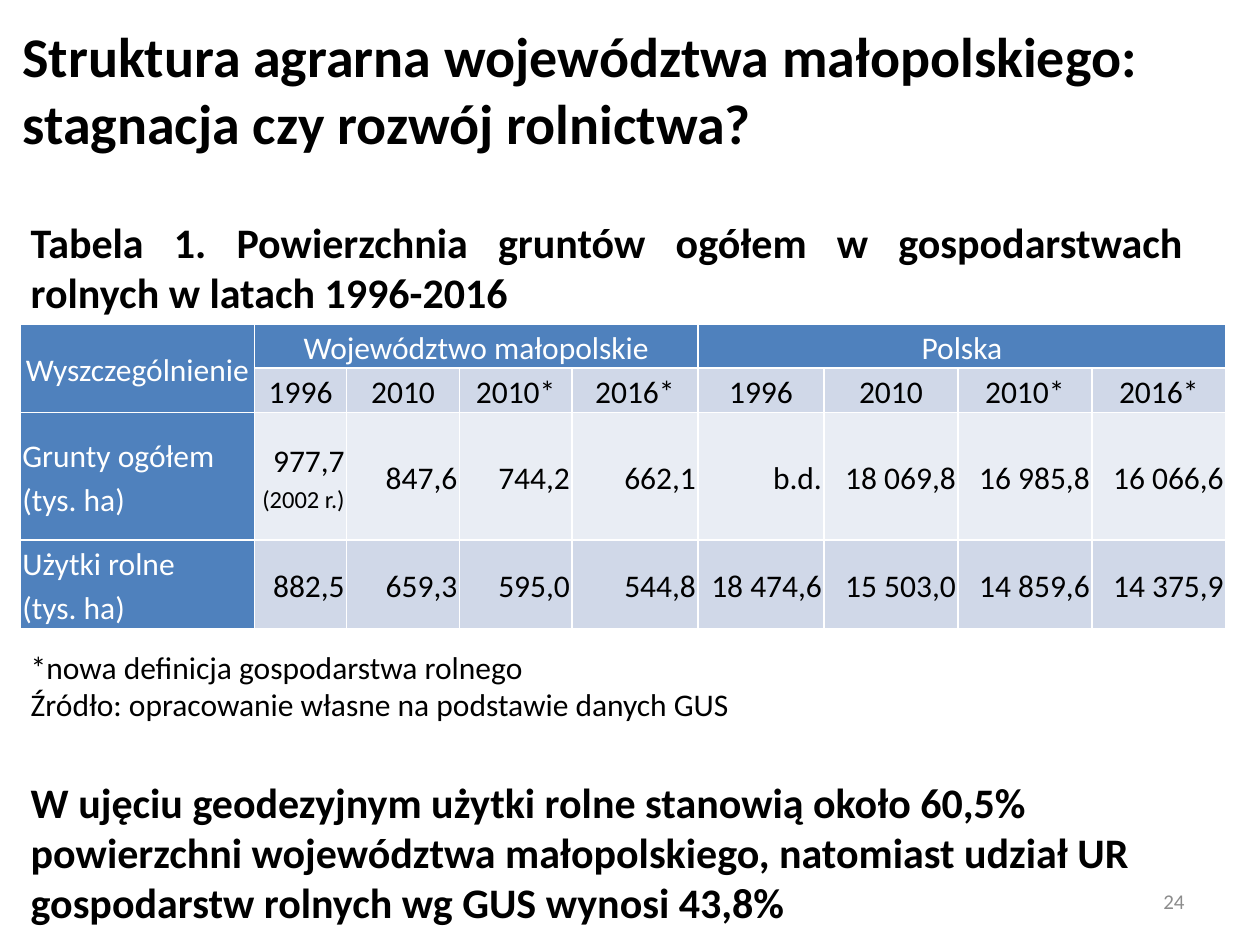
from dataclasses import dataclass

from lxml.etree import SubElement
from pptx import Presentation
from pptx.dml.color import RGBColor
from pptx.enum.text import MSO_ANCHOR as Anchor, MSO_AUTO_SIZE as AutoSize, PP_ALIGN as Align
from pptx.oxml.ns import qn
from pptx.util import Cm, Pt


@dataclass(frozen=True)
class Theme:
    font: str = "Calibri"
    ink: str = "000000"
    white: str = "FFFFFF"
    muted: str = "8C8C8C"
    header: str = "4F81BD"
    band: str = "D0D8E8"
    light: str = "E9EDF4"
    title: int = 32
    statement: int = 24
    regular: int = 18
    remark: int = 14
    number: int = 12


THEME = Theme()


@dataclass(frozen=True)
class Passage:
    lines: tuple[str, ...]
    box: tuple[float, float, float, float]
    size: int
    bold: bool = False
    color: str = THEME.ink
    align: Align = Align.LEFT
    anchor: Anchor = Anchor.TOP
    fit: AutoSize = AutoSize.SHAPE_TO_FIT_TEXT


@dataclass(frozen=True)
class DataRow:
    label: tuple[str, ...]
    values: tuple[tuple[str, ...], ...]
    fill: str


TITLE = Passage(
    ("Struktura agrarna województwa małopolskiego: stagnacja czy rozwój rolnictwa?",),
    (0.2, 0.3, 24.31, 3), THEME.title, bold=True, fit=AutoSize.NONE)
PASSAGES = (
    Passage(("24",), (18.2, 17.65, 5.93, 1.02), THEME.number, color=THEME.muted,
            align=Align.RIGHT, anchor=Anchor.MIDDLE, fit=AutoSize.NONE),
    Passage(("Tabela 1. Powierzchnia gruntów ogółem w gospodarstwach rolnych w latach 1996-2016",),
            (0.37, 4.22, 23.73, 2.31), THEME.statement, bold=True,
            align=Align.JUSTIFY, anchor=Anchor.MIDDLE),
    Passage(("*nowa definicja gospodarstwa rolnego",
             "Źródło: opracowanie własne na podstawie danych GUS"),
            (0.37, 12.93, 22, 1.8), THEME.regular, align=Align.JUSTIFY),
    Passage(("W ujęciu geodezyjnym użytki rolne stanowią około 60,5% powierzchni województwa "
             "małopolskiego, natomiast udział UR gospodarstw rolnych wg GUS wynosi 43,8%",),
            (0.37, 15.52, 24.74, 3.33), THEME.statement, bold=True),
)

REGIONS = ("Województwo małopolskie", "Polska")
YEARS = ("1996", "2010", "2010*", "2016*")
COLUMN_WIDTHS = (4.72, 1.86, 2.27, 2.27, 2.54, 2.54, 2.7, 2.7, 2.7)
ROW_HEIGHTS = (0.87, 0.87, 2.57, 1.71)
DATA = (
    DataRow(("Grunty ogółem (tys. ha)",),
            (("977,7", "(2002 r.)"), ("847,6",), ("744,2",), ("662,1",),
             ("b.d.",), ("18 069,8",), ("16 985,8",), ("16 066,6",)), THEME.light),
    DataRow(("Użytki rolne", "(tys. ha)"),
            (("882,5",), ("659,3",), ("595,0",), ("544,8",),
             ("18 474,6",), ("15 503,0",), ("14 859,6",), ("14 375,9",)), THEME.band),
)


def write_lines(frame, lines: tuple[str, ...], size: int, color: str, align: Align,
                bold: bool = False, spacing: float = 1.0) -> None:
    """Write each line as a paragraph; a bracketed remark under a value is smaller."""
    for index, line in enumerate(lines):
        paragraph = frame.paragraphs[0] if index == 0 else frame.add_paragraph()
        paragraph.alignment = align
        paragraph.line_spacing = spacing
        paragraph.space_before = Pt(0)
        run = paragraph.add_run()
        run.text = line
        run.font.name = THEME.font
        run.font.size = Pt(THEME.remark if line == "(2002 r.)" else size)
        run.font.bold = bold
        run.font.color.rgb = RGBColor.from_string(color)


def fill_passage(holder, passage: Passage) -> None:
    """Place a text holder and write its passage."""
    holder.left, holder.top, holder.width, holder.height = map(Cm, passage.box)
    frame = holder.text_frame
    frame.word_wrap = True
    frame.auto_size = passage.fit
    frame.vertical_anchor = passage.anchor
    write_lines(frame, passage.lines, passage.size, passage.color, passage.align, passage.bold)


def frame_cell(cell) -> None:
    """Give a cell thin white borders on all four sides."""
    properties = cell._tc.get_or_add_tcPr()
    for side in ("a:lnL", "a:lnR", "a:lnT", "a:lnB"):
        border = SubElement(properties, qn(side), w=str(Pt(1)))
        paint = SubElement(border, qn("a:solidFill"))
        SubElement(paint, qn("a:srgbClr"), val=THEME.white)


def fill_cell(cell, lines: tuple[str, ...], fill: str, align: Align) -> None:
    """Write and colour one table cell."""
    cell.fill.solid()
    cell.fill.fore_color.rgb = RGBColor.from_string(fill)
    color = THEME.white if fill == THEME.header else THEME.ink
    write_lines(cell.text_frame, lines, THEME.regular, color, align, spacing=1.15)


def add_land_table(slide) -> None:
    """Build the table of land area by region and year."""
    table = slide.shapes.add_table(
        len(ROW_HEIGHTS), len(COLUMN_WIDTHS), Cm(0.41), Cm(6.53),
        Cm(sum(COLUMN_WIDTHS)), Cm(sum(ROW_HEIGHTS))).table
    table.first_row = table.horz_banding = False
    for column, width in zip(table.columns, COLUMN_WIDTHS):
        column.width = Cm(width)
    for row, height in zip(table.rows, ROW_HEIGHTS):
        row.height = Cm(height)
    for cell in table.iter_cells():
        cell.margin_left = cell.margin_right = Cm(0.04)
        cell.margin_top = cell.margin_bottom = Cm(0)
        cell.vertical_anchor = Anchor.MIDDLE
        frame_cell(cell)

    table.cell(0, 0).merge(table.cell(1, 0))
    fill_cell(table.cell(0, 0), ("Wyszczególnienie",), THEME.header, Align.CENTER)
    for group, region in enumerate(REGIONS):
        first = 1 + group * len(YEARS)
        table.cell(0, first).merge(table.cell(0, first + len(YEARS) - 1))
        fill_cell(table.cell(0, first), (region,), THEME.header, Align.CENTER)
        for column, year in enumerate(YEARS, first):
            fill_cell(table.cell(1, column), (year,), THEME.band, Align.CENTER)
    for row, data in enumerate(DATA, 2):
        fill_cell(table.cell(row, 0), data.label, THEME.header, Align.LEFT)
        for column, value in enumerate(data.values, 1):
            fill_cell(table.cell(row, column), value, data.fill, Align.RIGHT)


def main() -> None:
    """Build and save the slide."""
    deck = Presentation()
    deck.slide_width, deck.slide_height = Cm(25.4), Cm(19.05)
    slide = deck.slides.add_slide(deck.slide_layouts[5])
    fill_passage(slide.shapes.title, TITLE)
    add_land_table(slide)
    for passage in PASSAGES:
        fill_passage(slide.shapes.add_textbox(*map(Cm, passage.box)), passage)
    deck.save("out.pptx")


if __name__ == "__main__":
    main()
